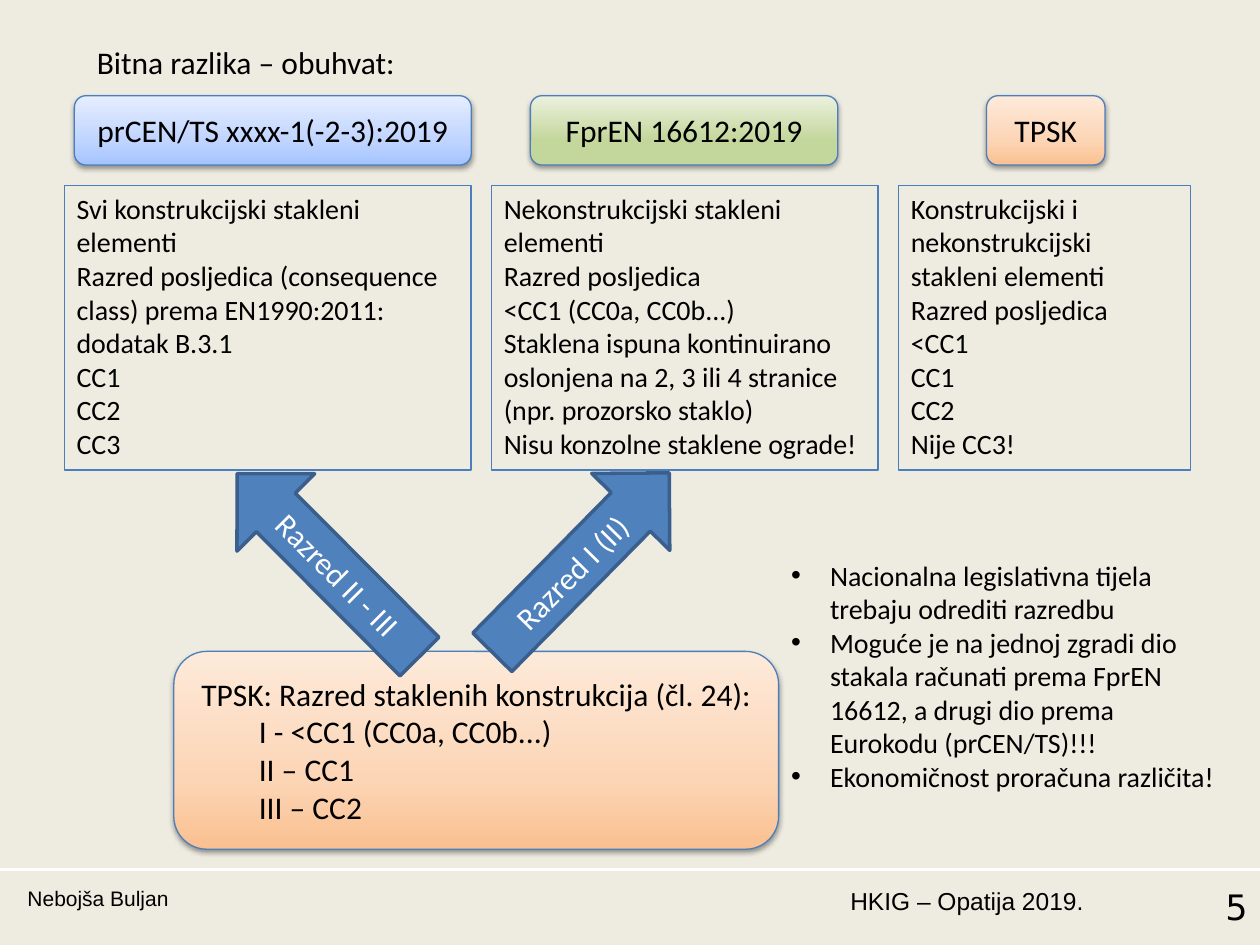
import copy

import pptx
import pptx.dml.color
import pptx.enum.shapes
import pptx.enum.text
import pptx.oxml
import pptx.oxml.ns
import pptx.util
from lxml import etree

Inches = pptx.util.Inches
Pt = pptx.util.Pt
RGBColor = pptx.dml.color.RGBColor
Shape = pptx.enum.shapes.MSO_SHAPE
Align = pptx.enum.text.PP_ALIGN
Anchor = pptx.enum.text.MSO_ANCHOR
qn = pptx.oxml.ns.qn

# Colours
BACKGROUND = RGBColor(0xEE, 0xEC, 0xE1)
BLACK = RGBColor(0x00, 0x00, 0x00)
WHITE = RGBColor(0xFF, 0xFF, 0xFF)
OUTLINE = RGBColor(0x4B, 0x7E, 0xBC)
ARROW_FILL = RGBColor(0x4F, 0x81, 0xBD)
ARROW_EDGE = RGBColor(0x3A, 0x5F, 0x8C)

# Gradients run from the bottom edge to the top edge
BLUE = (RGBColor(0xA4, 0xC4, 0xFF), RGBColor(0xBF, 0xD4, 0xFF), RGBColor(0xE6, 0xEE, 0xFF))
GREEN = (RGBColor(0xC3, 0xD6, 0x9B), RGBColor(0xC3, 0xD6, 0x9B), RGBColor(0xEB, 0xF1, 0xDE))
ORANGE = (RGBColor(0xFA, 0xC0, 0x90), RGBColor(0xFC, 0xD5, 0xB5), RGBColor(0xFD, 0xEA, 0xDA))
STOPS = (0, 0.35, 1)

SHADOW = (
    f'<a:effectLst {pptx.oxml.ns.nsdecls("a")}>'
    f'<a:outerShdw blurRad="{Pt(3.1)}" dist="{Pt(1.6)}" dir="5400000" rotWithShape="0">'
    '<a:srgbClr val="000000"><a:alpha val="38000"/></a:srgbClr>'
    '</a:outerShdw></a:effectLst>'
)


class SlideBuilder:
    """Holds the text style and the slide being built."""

    style = {"name": "Calibri", "size": Pt(18)}

    def __init__(self, slide):
        self.slide = slide
        slide.background.fill.solid()
        slide.background.fill.fore_color.rgb = BACKGROUND

    def fill_text(self, frame, lines, align=Align.LEFT, color=BLACK, bullets=False,
                  anchor=Anchor.TOP, grow=False, **font_format):
        frame.word_wrap = True
        frame.vertical_anchor = anchor
        if grow:
            frame.auto_size = pptx.enum.text.MSO_AUTO_SIZE.SHAPE_TO_FIT_TEXT
        for index, line in enumerate(lines):
            paragraph = frame.paragraphs[0] if index == 0 else frame.add_paragraph()
            # Only the heading line of a centred box is centred
            paragraph.alignment = align if index == 0 else Align.LEFT
            if bullets:
                self.bullet(paragraph)
            run = paragraph.add_run()
            run.text = line
            for key, value in {**self.style, **font_format}.items():
                setattr(run.font, key, value)
            run.font.color.rgb = color

    def bullet(self, paragraph):
        properties = paragraph._p.get_or_add_pPr()
        properties.set("marL", str(Inches(0.31)))
        properties.set("indent", str(-Inches(0.31)))
        etree.SubElement(properties, qn("a:buFont")).set("typeface", "Arial")
        etree.SubElement(properties, qn("a:buChar")).set("char", "•")

    def text(self, box, lines, **options):
        label = self.slide.shapes.add_textbox(*map(Inches, box))
        self.fill_text(label.text_frame, lines, **options)

    def shape(self, kind, box, line_color, line_width):
        shape = self.slide.shapes.add_shape(kind, *map(Inches, box))
        shape.shadow.inherit = False
        shape.line.color.rgb = line_color
        shape.line.width = Pt(line_width)
        return shape

    def pill(self, box, lines, gradient):
        pill = self.shape(Shape.ROUNDED_RECTANGLE, box, OUTLINE, 0.75)
        pill.fill.gradient()
        pill.fill.gradient_angle = 90
        properties = pill._element.spPr
        stop_list = properties.find(".//" + qn("a:gsLst"))
        stop_list.append(copy.deepcopy(stop_list[0]))
        for stop, position, color in zip(pill.fill.gradient_stops, STOPS, gradient):
            stop.position = position
            stop.color.rgb = color
        properties.replace(properties.find(qn("a:effectLst")), pptx.oxml.parse_xml(SHADOW))
        self.fill_text(pill.text_frame, lines, align=Align.CENTER, anchor=Anchor.MIDDLE)

    def panel(self, box, lines):
        panel = self.shape(Shape.RECTANGLE, box, OUTLINE, 0.75)
        panel.fill.background()
        self.fill_text(panel.text_frame, lines, size=Pt(16), grow=True)

    def arrow(self, kind, box, rotation, caption):
        arrow = self.shape(kind, box, ARROW_EDGE, 2)
        arrow.fill.solid()
        arrow.fill.fore_color.rgb = ARROW_FILL
        arrow.rotation = rotation
        self.fill_text(arrow.text_frame, [caption], align=Align.CENTER,
                       anchor=Anchor.MIDDLE, color=WHITE)

    def rule(self, y, width):
        rule = self.slide.shapes.add_connector(
            pptx.enum.shapes.MSO_CONNECTOR.STRAIGHT, 0, Inches(y), Inches(width), Inches(y))
        rule.line.color.rgb = WHITE
        rule.line.width = Pt(1.5)
        etree.SubElement(rule._element.spPr, qn("a:effectLst"))


def main():
    deck = pptx.Presentation()
    deck.slide_width, deck.slide_height = Inches(10), Inches(7.5)
    page = SlideBuilder(deck.slides.add_slide(deck.slide_layouts[6]))

    # Footer
    page.rule(6.9, 10)
    page.text((6.57, 6.98, 2.13, 0.52), ["HKIG – Opatija 2019."],
              align=Align.RIGHT, name="Arial", size=Pt(14))
    page.text((0.12, 6.98, 6.54, 0.52), ["Nebojša Buljan"], name="Arial", size=Pt(12))
    page.text((8.78, 6.98, 1.22, 0.52), ["5"],
              align=Align.RIGHT, name="DejaVu Sans", size=Pt(20))

    # Heading
    page.text((0.67, 0.29, 8.5, 0.4), ["Bitna razlika – obuhvat:"], grow=True)

    # Standards: pill left and width, gradient, panel width, scope
    standards = [
        ("prCEN/TS xxxx-1(-2-3):2019", 0.59, 3.15, BLUE, 3.23, [
            "Svi konstrukcijski stakleni elementi",
            "Razred posljedica (consequence class) prema EN1990:2011: dodatak B.3.1",
            "CC1", "CC2", "CC3"]),
        ("FprEN 16612:2019", 4.21, 2.44, GREEN, 3.07, [
            "Nekonstrukcijski stakleni elementi",
            "Razred posljedica",
            "<CC1 (CC0a, CC0b...)",
            "Staklena ispuna kontinuirano oslonjena na 2, 3 ili 4 stranice "
            "(npr. prozorsko staklo)",
            "Nisu konzolne staklene ograde!"]),
        ("TPSK", 7.83, 0.94, ORANGE, 2.32, [
            "Konstrukcijski i nekonstrukcijski stakleni elementi",
            "Razred posljedica",
            "<CC1", "CC1", "CC2", "Nije CC3!"]),
    ]
    panel_left, panel_gap = 0.51, 0.16
    for standard, pill_left, pill_width, gradient, panel_width, scope in standards:
        page.pill((pill_left, 0.76, pill_width, 0.55), [standard], gradient)
        page.panel((panel_left, 1.47, panel_width, 2.26), scope)
        panel_left += panel_width + panel_gap

    # Classes of glass structures and the standards they lead to
    page.pill((1.38, 5.17, 4.8, 1.57), [
        "TPSK: Razred staklenih konstrukcija (čl. 24):",
        "\tI - <CC1 (CC0a, CC0b...)",
        "\tII – CC1",
        "\tIII – CC2"], ORANGE)
    page.arrow(Shape.RIGHT_ARROW, (3.61, 4.03, 2, 0.87), 314.6, "Razred I (II)")
    page.arrow(Shape.LEFT_ARROW, (1.58, 4.05, 2.05, 0.87), 45.1, "Razred II - III")

    # Remarks
    page.text((6.18, 4.38, 3.62, 1.99), [
        "Nacionalna legislativna tijela trebaju odrediti razredbu",
        "Moguće je na jednoj zgradi dio stakala računati prema FprEN 16612, "
        "a drugi dio prema Eurokodu (prCEN/TS)!!!",
        "Ekonomičnost proračuna različita!"], bullets=True, size=Pt(16), grow=True)

    deck.save("out.pptx")


if __name__ == "__main__":
    main()
